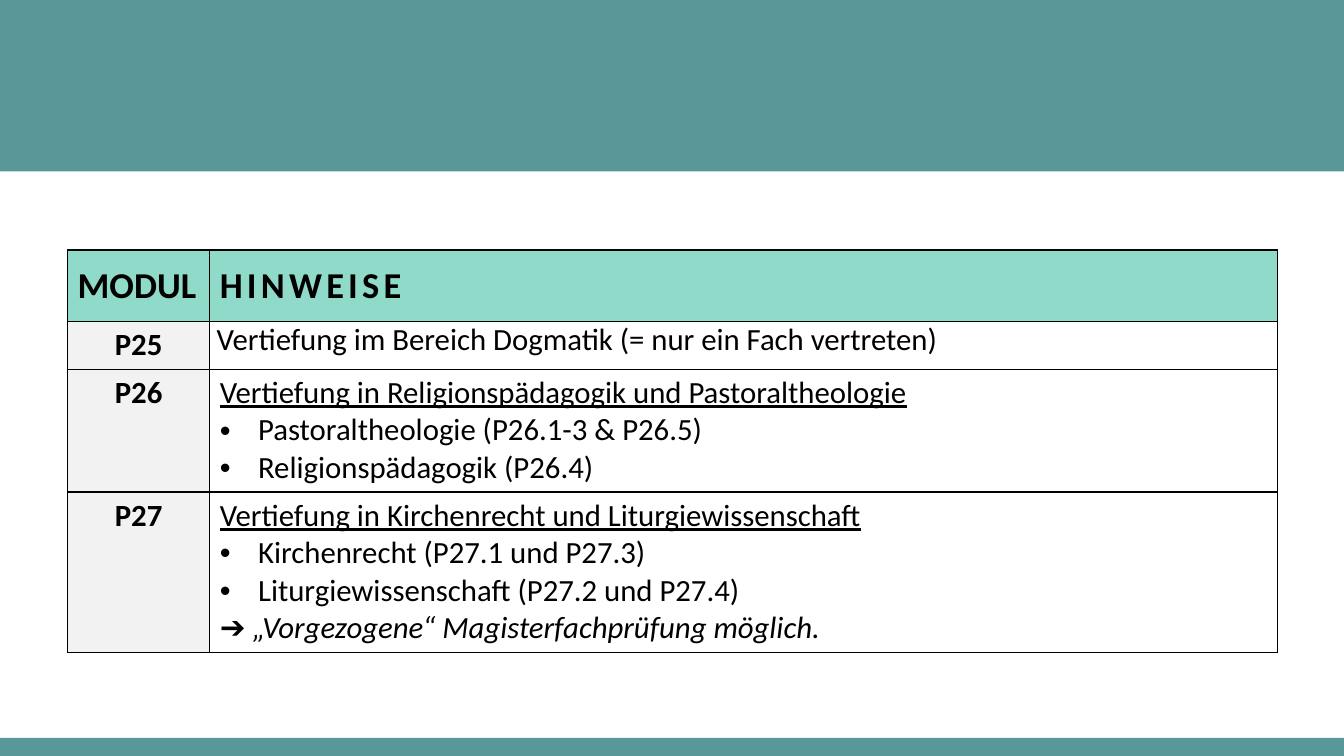
from lxml import etree
from pptx import Presentation
from pptx.dml.color import RGBColor
from pptx.enum import shapes, text
from pptx.oxml import ns
from pptx.util import Inches, Pt

COLORS = {"band": "589898", "header": "8FDAC8", "module": "F2F2F2", "ink": "000000"}
MODULES = [
    ("P25", ["Vertiefung im Bereich Dogmatik (= nur ein Fach vertreten)"]),
    ("P26", ["Vertiefung in Religionspädagogik und Pastoraltheologie",
             "• Pastoraltheologie (P26.1-3 & P26.5)",
             "• Religionspädagogik (P26.4)"]),
    ("P27", ["Vertiefung in Kirchenrecht und Liturgiewissenschaft",
             "• Kirchenrecht (P27.1 und P27.3)",
             "• Liturgiewissenschaft (P27.2 und P27.4)",
             "➔ „Vorgezogene“ Magisterfachprüfung möglich."]),
]


def style_cell(cell, fill=None):
    properties = cell._tc.get_or_add_tcPr()
    for side in ("lnL", "lnR", "lnT", "lnB"):
        line = etree.SubElement(properties, ns.qn(f"a:{side}"), w=str(Pt(1)))
        solid = etree.SubElement(line, ns.qn("a:solidFill"))
        etree.SubElement(solid, ns.qn("a:srgbClr"), val=COLORS["ink"])
    if fill:
        cell.fill.solid()
        cell.fill.fore_color.rgb = RGBColor.from_string(COLORS[fill])
    else:
        cell.fill.background()


def write_line(para, wording, size, bold=False):
    if wording.startswith("• "):
        wording = wording[2:]
        properties = para._p.get_or_add_pPr()
        properties.set("marL", str(Inches(0.38)))
        properties.set("indent", str(-Inches(0.38)))
        etree.SubElement(properties, ns.qn("a:buFont"), typeface="Arial")
        etree.SubElement(properties, ns.qn("a:buChar"), char="•")
    span = para.add_run()
    span.text = wording
    span.font.name = "Calibri"
    span.font.size = Pt(size)
    span.font.bold = bold
    span.font.color.rgb = RGBColor.from_string(COLORS["ink"])
    return span


deck = Presentation()
deck.slide_width, deck.slide_height = Inches(13.33), Inches(7.5)
page = deck.slides.add_slide(deck.slide_layouts[6])

for top, height in ((0, 1.7), (7.32, 0.18)):
    band = page.shapes.add_shape(shapes.MSO_SHAPE.RECTANGLE, 0, Inches(top),
                                 deck.slide_width, Inches(height))
    band.shadow.inherit = False
    band.fill.solid()
    band.fill.fore_color.rgb = RGBColor.from_string(COLORS["band"])
    band.line.fill.background()

table = page.shapes.add_table(4, 2, Inches(0.67), Inches(2.48),
                              Inches(12), Inches(3.99)).table
table.first_row = False
table.horz_banding = False
for column, width in zip(table.columns, (1.41, 10.59)):
    column.width = Inches(width)
for row, height in zip(table.rows, (0.71, 0.47, 1.22, 1.59)):
    row.height = Inches(height)

for cell, heading, spacing in zip(table.rows[0].cells, ("MODUL", "HINWEISE"), (0, 300)):
    style_cell(cell, "header")
    cell.vertical_anchor = text.MSO_ANCHOR.MIDDLE
    span = write_line(cell.text_frame.paragraphs[0], heading, 26, True)
    span.font._element.set("spc", str(spacing))

for index, (module, notes) in enumerate(MODULES, 1):
    module_cell, notes_cell = table.rows[index].cells
    style_cell(module_cell, "module")
    style_cell(notes_cell)
    para = module_cell.text_frame.paragraphs[0]
    para.alignment = text.PP_ALIGN.CENTER
    write_line(para, module, 22, True)
    frame = notes_cell.text_frame
    for position, note in enumerate(notes):
        para = frame.add_paragraph() if position else frame.paragraphs[0]
        span = write_line(para, note, 22)
        span.font.underline = position == 0 and len(notes) > 1
        span.font.italic = note.startswith("➔")

dogmatics = table.cell(1, 1)
dogmatics.margin_left = dogmatics.margin_right = Inches(0.07)
dogmatics.margin_top = dogmatics.margin_bottom = 0

deck.save("out.pptx")
